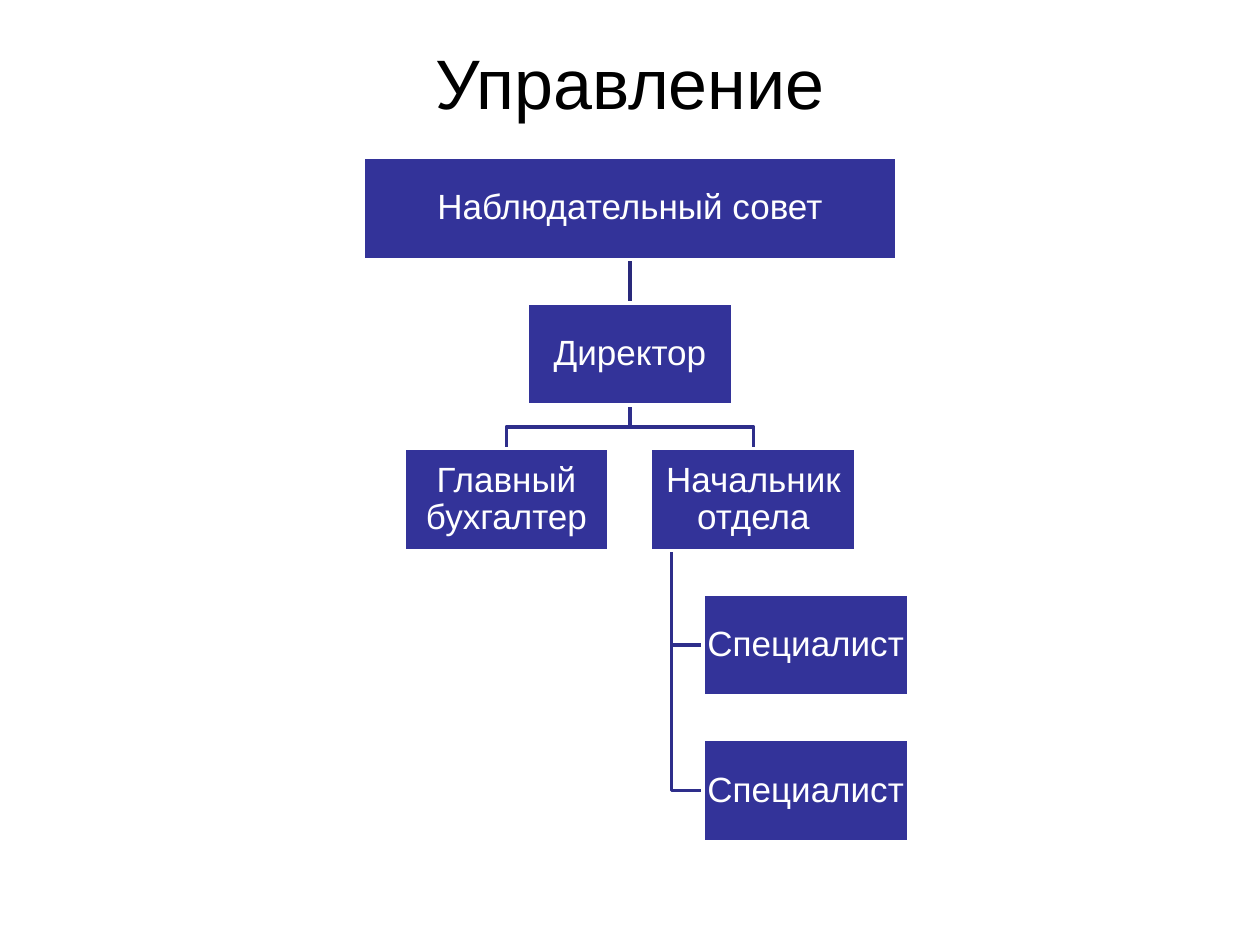
from dataclasses import dataclass

from lxml import etree
from pptx import Presentation
from pptx.dml.color import RGBColor
from pptx.enum.shapes import MSO_CONNECTOR, MSO_SHAPE
from pptx.enum.text import MSO_ANCHOR, PP_ALIGN
from pptx.oxml.ns import qn
from pptx.util import Inches, Pt

CENTER = PP_ALIGN.CENTER
MIDDLE = MSO_ANCHOR.MIDDLE
RECTANGLE = MSO_SHAPE.RECTANGLE
STRAIGHT = MSO_CONNECTOR.STRAIGHT


@dataclass(frozen=True)
class Theme:
    font: str = "Arial"
    title_size: int = 40
    box_size: int = 20
    line_width: int = 2
    black: RGBColor = RGBColor(0x00, 0x00, 0x00)
    white: RGBColor = RGBColor(0xFF, 0xFF, 0xFF)
    box: RGBColor = RGBColor(0x33, 0x33, 0x99)
    branch: RGBColor = RGBColor(0x2E, 0x2E, 0x8B)
    trunk: RGBColor = RGBColor(0x29, 0x29, 0x7B)


theme = Theme()


def write_text(shape, text, *, size, color, margin, spacing=1.0):
    frame = shape.text_frame
    frame.word_wrap = True
    frame.vertical_anchor = MIDDLE
    frame.margin_left = frame.margin_right = Inches(margin)
    frame.margin_top = frame.margin_bottom = Inches(margin)
    paragraph = frame.paragraphs[0]
    paragraph.alignment = CENTER
    paragraph.line_spacing = spacing
    run = paragraph.add_run()
    run.text = text
    run.font.name = theme.font
    run.font.size = Pt(size)
    run.font.color.rgb = color


def style_line(line, color):
    line.color.rgb = color
    line.width = Pt(theme.line_width)


presentation = Presentation()
presentation.slide_width = Inches(10)
presentation.slide_height = Inches(7.5)
slide = presentation.slides.add_slide(presentation.slide_layouts[6])
shapes = slide.shapes

title = shapes.add_textbox(Inches(0.5), Inches(0.3), Inches(9), Inches(0.69))
write_text(title, "Управление", size=theme.title_size, color=theme.black, margin=0.05)

box_width, box_height = 1.63, 0.81
first_top, last_top = 1.25, 5.87
row_step = (last_top - first_top) / 4
tops = [first_top + row * row_step for row in range(5)]
center = 5
half_spread = 0.98
stem = 5.33
specialist_left = 5.58

director_bottom = tops[1] + box_height
fork = (director_bottom + tops[2]) / 2
head_bottom = tops[2] + box_height
branches = []
for top in (tops[4], tops[3]):
    level = top + box_height / 2
    branches.append([(stem, head_bottom), (stem, level), (specialist_left, level)])
for side in (1, -1):
    end = center + side * half_spread
    branches.append([(center, director_bottom), (center, fork), (end, fork), (end, tops[2])])

for points in branches:
    start, *corners = [(Inches(x), Inches(y)) for x, y in points]
    builder = shapes.build_freeform(*start)
    builder.add_line_segments(corners, close=False)
    branch = builder.convert_to_shape()
    branch.shadow.inherit = False
    branch.fill.background()
    style_line(branch.line, theme.branch)

positions = [
    ("Наблюдательный совет", center, 0, 4.24),
    ("Директор", center, 1, box_width),
    ("Главный бухгалтер", center - half_spread, 2, box_width),
    ("Начальник отдела", center + half_spread, 2, box_width),
    ("Специалист", specialist_left + box_width / 2, 3, box_width),
    ("Специалист", specialist_left + box_width / 2, 4, box_width),
]
boxes = []
for text, middle, row, width in positions:
    box = shapes.add_shape(
        RECTANGLE, Inches(middle - width / 2), Inches(tops[row]), Inches(width), Inches(box_height)
    )
    box.shadow.inherit = False
    box.fill.solid()
    box.fill.fore_color.rgb = theme.box
    style_line(box.line, theme.white)
    write_text(box, text, size=theme.box_size, color=theme.white, margin=0.01, spacing=0.9)
    boxes.append(box)

council, director = boxes[:2]
trunk = shapes.add_connector(
    STRAIGHT, Inches(center), Inches(tops[0] + box_height), Inches(center), Inches(tops[1])
)
trunk.begin_connect(council, 2)
trunk.end_connect(director, 0)
style_line(trunk.line, theme.trunk)
etree.SubElement(trunk.element.spPr, qn("a:effectLst"))
council.element.addprevious(trunk.element)

presentation.save("out.pptx")
